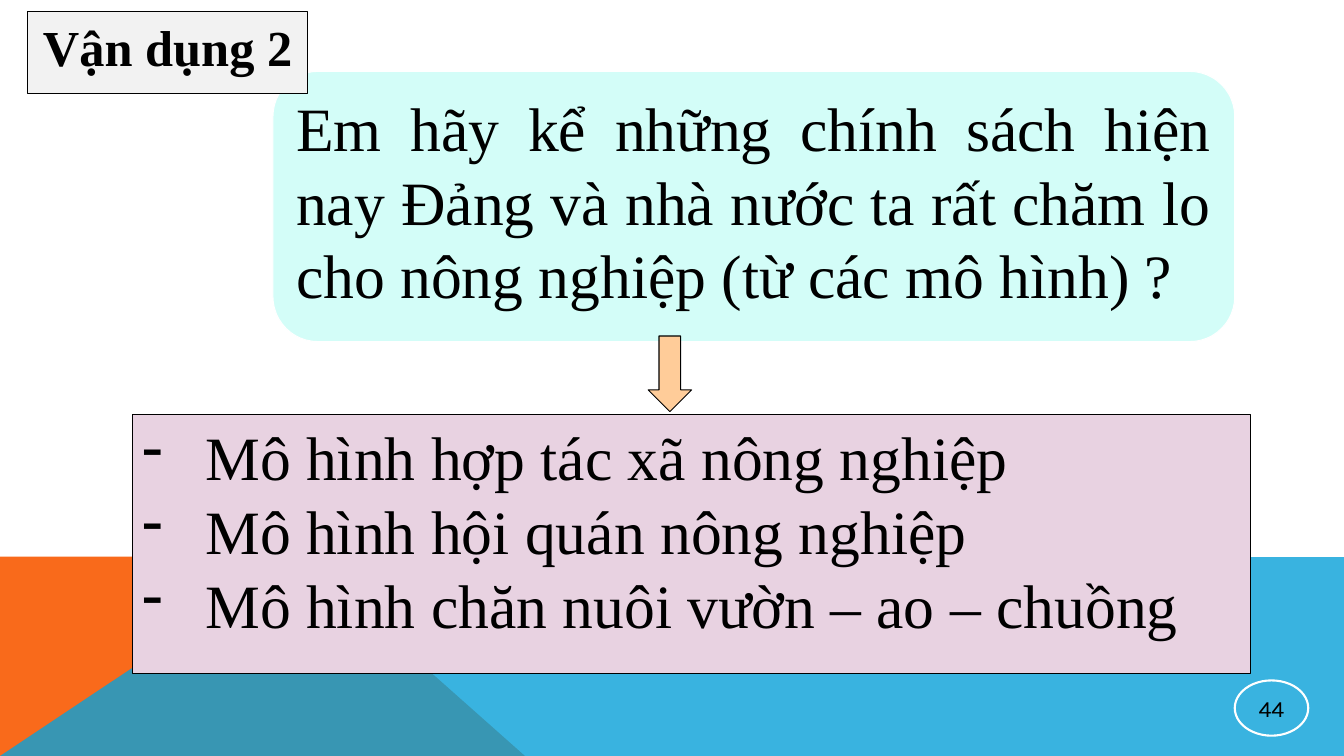
"""Build the lesson slide on agricultural policy models."""
from lxml import etree
from pptx import Presentation, util as u
from pptx.dml.color import RGBColor
from pptx.enum import shapes, text
from pptx.oxml.ns import qn

Pt = u.Pt
KIND = shapes.MSO_SHAPE
ALIGN = text.PP_ALIGN
SERIF = "Times New Roman"


def paint(fill, color):
    fill.solid()
    fill.fore_color.rgb = RGBColor.from_string(color)


def add_panel(kind, box, fill, line, width, lines=(), align=ALIGN.JUSTIFY,
              anchor=text.MSO_ANCHOR.TOP, size=44, face=SERIF, bold=False):
    panel = slide.shapes.add_shape(kind, *[Pt(v) for v in box])
    panel.shadow.inherit = False
    if fill:
        paint(panel.fill, fill)
    else:
        panel.fill.background()
    paint(panel.line.fill, line)
    panel.line.width = Pt(width)
    frame = panel.text_frame
    frame.word_wrap = True
    frame.vertical_anchor = anchor
    for i, line_text in enumerate(lines):
        paragraph = frame.paragraphs[0] if i == 0 else frame.add_paragraph()
        paragraph.alignment = align
        run = paragraph.add_run()
        run.text = line_text
        for key, value in {"size": Pt(size), "name": face, "bold": bold}.items():
            setattr(run.font, key, value)
        paint(run.font.fill, "000000")
    return panel


deck = Presentation()
deck.slide_width, deck.slide_height = Pt(960), Pt(540)
slide = deck.slides.add_slide(deck.slide_layouts[6])

bands = [
    ("F96A1B", [(0, 540), (0, 397.5), (214.5, 397.5), (375, 540)]),
    ("08A1D9", [(0, 540), (214, 397.5), (960, 398), (960, 540)]),
]
for color, points in bands:
    outline = slide.shapes.build_freeform(Pt(points[0][0]), Pt(points[0][1]))
    outline.add_line_segments([(Pt(x), Pt(y)) for x, y in points[1:]])
    band = outline.convert_to_shape()
    band.shadow.inherit = False
    paint(band.fill, color)
    band.line.fill.background()
blue_tint = band.fill._xPr.find(qn("a:solidFill"))[0]
etree.SubElement(blue_tint, qn("a:alpha"), val="80000")

add_panel(KIND.ROUNDED_RECTANGLE, (195, 51, 687, 193), "D3FDF8", "FFFFFF", 0.75,
          ["Em hãy kể những chính sách hiện nay Đảng và nhà nước ta rất chăm lo "
           "cho nông nghiệp (từ các mô hình) ?"])

models = add_panel(KIND.RECTANGLE, (94.5, 296, 799, 185), "E8D2E1", "000000", 0.75,
                   ["Mô hình hợp tác xã nông nghiệp",
                    "Mô hình hội quán nông nghiệp",
                    "Mô hình chăn nuôi vườn – ao – chuồng"])
for paragraph in models.text_frame.paragraphs:
    props = paragraph._p.get_or_add_pPr()
    props.set("marL", str(Pt(45)))
    props.set("indent", str(-Pt(45)))
    etree.SubElement(props, qn("a:buChar"), char="-")

add_panel(KIND.DOWN_ARROW, (463, 240, 31, 54), "FFCC99", "000000", 0.75)

page_number = add_panel(KIND.OVAL, (882, 486, 52.5, 39.5), None, "FFFFFF", 1.5, ["44"],
                        ALIGN.CENTER, text.MSO_ANCHOR.MIDDLE, 16.5, "Karla")
for side in ("left", "top", "right", "bottom"):
    setattr(page_number.text_frame, "margin_" + side, Pt(0.75))

add_panel(KIND.RECTANGLE, (20, 8, 199.5, 59), "F2F2F2", "000000", 0.75, ["Vận dụng 2"],
          ALIGN.CENTER, size=36, bold=True)

deck.save("out.pptx")
